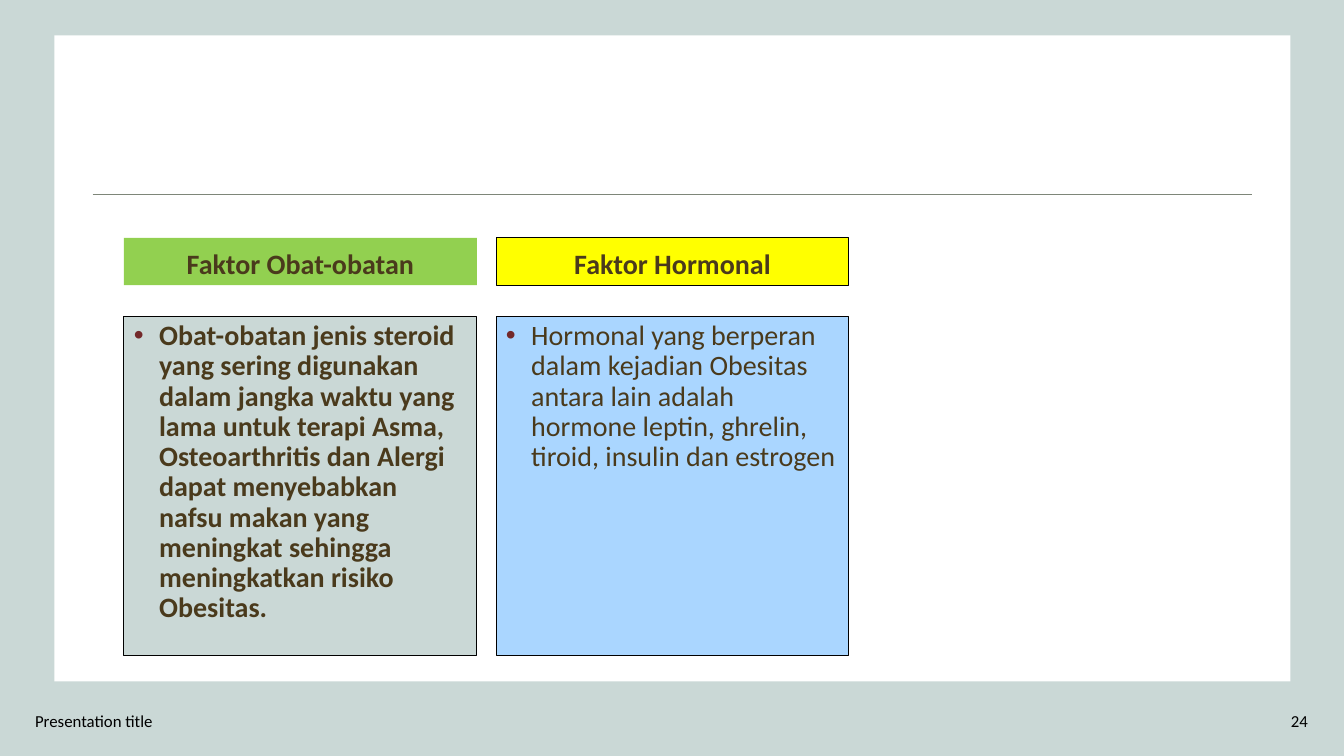
import pptx
import pptx.util
import pptx.dml.color
import pptx.enum.shapes
import pptx.enum.text
import lxml.etree
from pptx.util import Inches

ALIGN = pptx.enum.text.PP_ALIGN
ANCHOR = pptx.enum.text.MSO_ANCHOR
BROWN = "4A3A1C"
BLACK = "000000"
SAGE = "CAD8D6"


def paint(target, color):
    """Give a fill a solid hex colour."""
    target.solid()
    target.fore_color.rgb = pptx.dml.color.RGBColor.from_string(color)


def add_box(slide, left, top, width, height, fill, line=None):
    """Add a filled rectangle, outlined if a line colour is given."""
    kind = pptx.enum.shapes.MSO_SHAPE.RECTANGLE
    box = slide.shapes.add_shape(
        kind, Inches(left), Inches(top), Inches(width), Inches(height))
    box.shadow.inherit = False
    paint(box.fill, fill)
    if line:
        paint(box.line.fill, line)
        box.line.width = pptx.util.Pt(0.75)
    else:
        box.line.fill.background()
    return box


def add_rule(slide, left, right, top, color):
    """Add a thin level line."""
    kind = pptx.enum.shapes.MSO_CONNECTOR.STRAIGHT
    rule = slide.shapes.add_connector(
        kind, Inches(left), Inches(top), Inches(right), Inches(top))
    paint(rule.line.fill, color)
    rule.line.width = pptx.util.Pt(1)
    props = rule._element.spPr
    lxml.etree.SubElement(props, pptx.oxml.ns.qn("a:effectLst"))


def add_bullet(para, color):
    """Put a hanging round bullet on a paragraph."""
    props = para._p.get_or_add_pPr()
    props.set("marL", str(Inches(0.25)))
    props.set("indent", str(Inches(-0.25)))
    tag = pptx.oxml.ns.qn
    tint = lxml.etree.SubElement(props, tag("a:buClr"))
    lxml.etree.SubElement(tint, tag("a:srgbClr"), val=color)
    lxml.etree.SubElement(props, tag("a:buFont"), typeface="Arial")
    lxml.etree.SubElement(props, tag("a:buChar"), char="•")


def write(shape, text, size, color, align, anchor, bold=False, bullet=None):
    """Fill a shape with one styled paragraph."""
    frame = shape.text_frame
    frame.word_wrap = True
    frame.vertical_anchor = anchor
    para = frame.paragraphs[0]
    para.text = text
    para.alignment = align
    if bullet:
        add_bullet(para, bullet)
    para.font.name = "Calibri"
    para.font.size = pptx.util.Pt(size)
    para.font.bold = bold
    paint(para.font.fill, color)
    return para


def add_factor(slide, left, head, body, fills, line, bold):
    """Add a heading box with its bulleted box below."""
    top = add_box(slide, left, 2.36, 3.5, 0.47, fills[0], line)
    para = write(top, head, 20, BROWN, ALIGN.CENTER, ANCHOR.BOTTOM, True)
    para.line_spacing = 0.9
    low = add_box(slide, left, 3.14, 3.5, 3.36, fills[1], BLACK)
    para = write(low, body, 20, BROWN, ALIGN.LEFT, ANCHOR.TOP, bold, "73292A")
    para.line_spacing = 0.9


def add_note(slide, left, width, text, align):
    """Add a small footer text."""
    note = slide.shapes.add_textbox(
        Inches(left), Inches(6.95), Inches(width), Inches(0.4))
    write(note, text, 12, BLACK, align, ANCHOR.MIDDLE)


def main():
    """Build the slide and save it."""
    deck = pptx.Presentation()
    deck.slide_width = Inches(13.33)
    deck.slide_height = Inches(7.5)
    slide = deck.slides.add_slide(deck.slide_layouts[6])
    paint(slide.background.fill, SAGE)
    add_box(slide, 0.54, 0.35, 12.26, 6.41, "FFFFFF")
    add_rule(slide, 0.92, 12.42, 1.93, "7E8679")
    add_factor(
        slide, 1.23, "Faktor Obat-obatan",
        "Obat-obatan jenis steroid yang sering digunakan dalam jangka waktu "
        "yang lama untuk terapi Asma, Osteoarthritis dan Alergi dapat "
        "menyebabkan nafsu makan yang meningkat sehingga meningkatkan "
        "risiko Obesitas.",
        ("92D050", SAGE), None, True)
    add_factor(
        slide, 4.92, "Faktor Hormonal",
        "Hormonal yang berperan dalam kejadian Obesitas antara lain adalah "
        "hormone leptin, ghrelin, tiroid, insulin dan estrogen",
        ("FFFF00", "AAD6FF"), BLACK, False)
    add_note(slide, 0.25, 4.5, "Presentation title", ALIGN.LEFT)
    add_note(slide, 10.07, 3, "24", ALIGN.RIGHT)
    deck.save("out.pptx")


if __name__ == "__main__":
    main()
